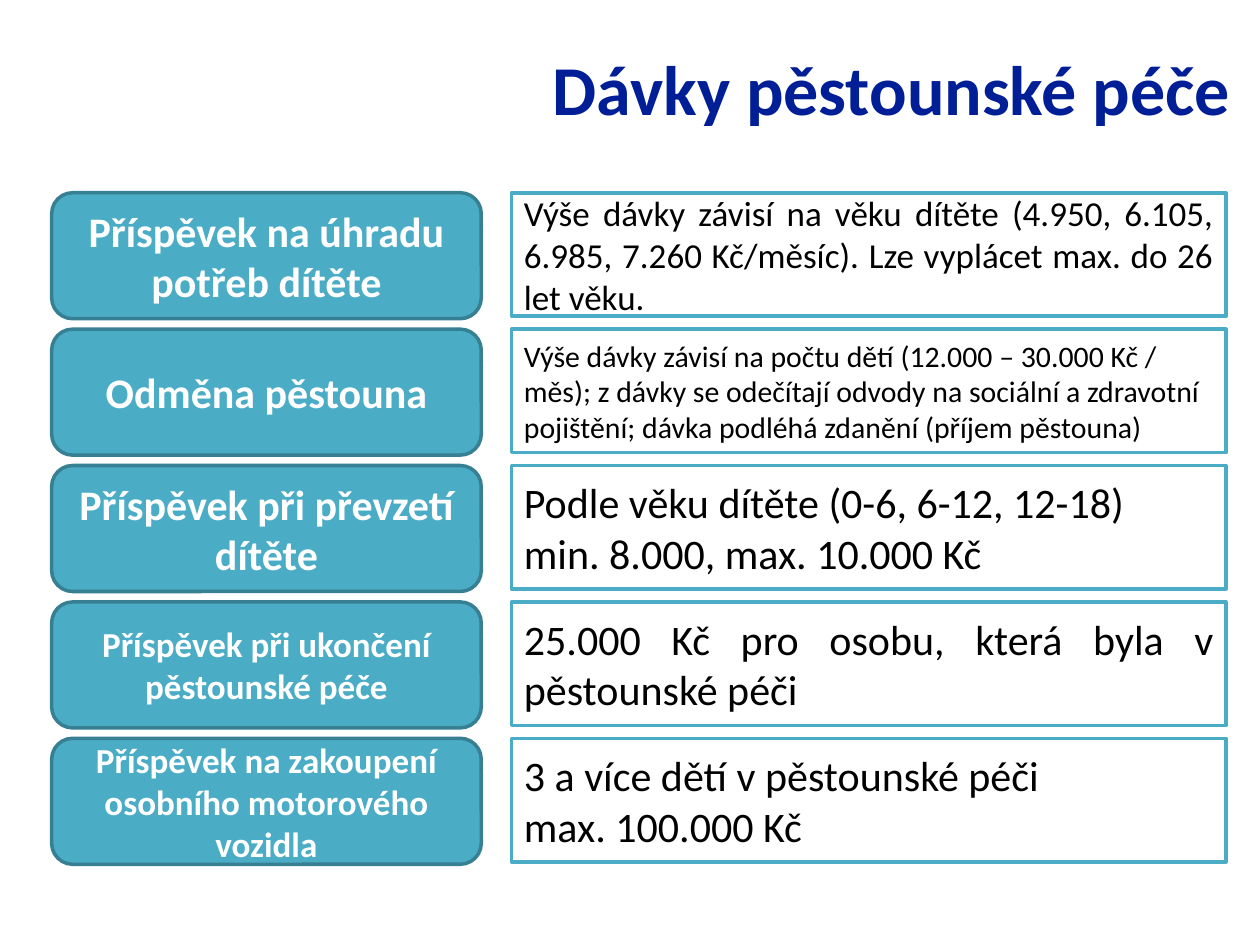
from pptx import Presentation
from pptx.dml.color import RGBColor
from pptx.enum import shapes, text
from pptx.util import Inches, Pt

NAVY = RGBColor(0x00, 0x1E, 0x96)
TEAL = RGBColor(0x4B, 0xAC, 0xC6)
DARK_TEAL = RGBColor(0x37, 0x7F, 0x92)
WHITE = RGBColor(0xFF, 0xFF, 0xFF)
BLACK = RGBColor(0x00, 0x00, 0x00)

LEFT, CENTER, JUSTIFY = text.PP_ALIGN.LEFT, text.PP_ALIGN.CENTER, text.PP_ALIGN.JUSTIFY

BENEFITS = [
    ("Příspěvek na úhradu potřeb dítěte", 24,
     "Výše dávky závisí na věku dítěte (4.950, 6.105, 6.985, 7.260 Kč/měsíc). "
     "Lze vyplácet max. do 26 let věku.", 20, JUSTIFY),
    ("Odměna pěstouna", 24,
     "Výše dávky závisí na počtu dětí (12.000 – 30.000 Kč / měs); z dávky se odečítají "
     "odvody na sociální a zdravotní pojištění; dávka podléhá zdanění (příjem pěstouna)",
     17, LEFT),
    ("Příspěvek při převzetí dítěte", 24,
     "Podle věku dítěte (0-6, 6-12, 12-18)\nmin. 8.000, max. 10.000 Kč", 24, LEFT),
    ("Příspěvek při ukončení pěstounské péče", 20,
     "25.000 Kč pro osobu, která byla v pěstounské péči", 24, JUSTIFY),
    ("Příspěvek na zakoupení osobního motorového vozidla", 20,
     "3 a více dětí v pěstounské péči\nmax. 100.000 Kč", 24, JUSTIFY),
]


def write(sp, content, size, color, align, bold=False):
    tf = sp.text_frame
    tf.word_wrap = True
    tf.text = content
    for p in tf.paragraphs:
        p.alignment = align
        for r in p.runs:
            r.font.name = "Calibri"
            r.font.size = Pt(size)
            r.font.bold = bold
            r.font.color.rgb = color


def add_title(s, x, y, w, h):
    sp = s.shapes.add_textbox(Inches(x), Inches(y), Inches(w), Inches(h))
    write(sp, "Dávky pěstounské péče", 40, NAVY, LEFT, bold=True)
    sp.text_frame.auto_size = text.MSO_AUTO_SIZE.SHAPE_TO_FIT_TEXT


def add_box(s, kind, x, y, w, h, fill, line):
    sp = s.shapes.add_shape(kind, Inches(x), Inches(y), Inches(w), Inches(h))
    sp.shadow.inherit = False
    sp.fill.solid()
    sp.fill.fore_color.rgb = fill
    sp.line.color.rgb = line
    sp.line.width = Pt(2)
    sp.text_frame.vertical_anchor = text.MSO_ANCHOR.MIDDLE
    return sp


def add_benefit(s, x, y, w, h, benefit):
    name, name_size, detail, detail_size, align = benefit
    name_w, detail_w = 3.41, 5.67
    label = add_box(s, shapes.MSO_SHAPE.ROUNDED_RECTANGLE, x, y, name_w, h, TEAL, DARK_TEAL)
    write(label, name, name_size, WHITE, CENTER, bold=True)
    panel = add_box(s, shapes.MSO_SHAPE.RECTANGLE, x + w - detail_w, y, detail_w, h - 0.02,
                    WHITE, TEAL)
    write(panel, detail, detail_size, BLACK, align)


def add_benefits(s, x, y, w, h):
    row_h = 1
    pitch = (h - row_h) / (len(BENEFITS) - 1)
    for i, benefit in enumerate(BENEFITS):
        add_benefit(s, x, y + i * pitch, w, row_h, benefit)


def main():
    prs = Presentation()
    prs.slide_width, prs.slide_height = Inches(10), Inches(7.5)
    s = prs.slides.add_slide(prs.slide_layouts[6])
    add_title(s, 4.29, 0.31, 5.67, 0.77)
    add_benefits(s, 0.41, 1.53, 9.32, 5.33)
    prs.save("out.pptx")


if __name__ == "__main__":
    main()
